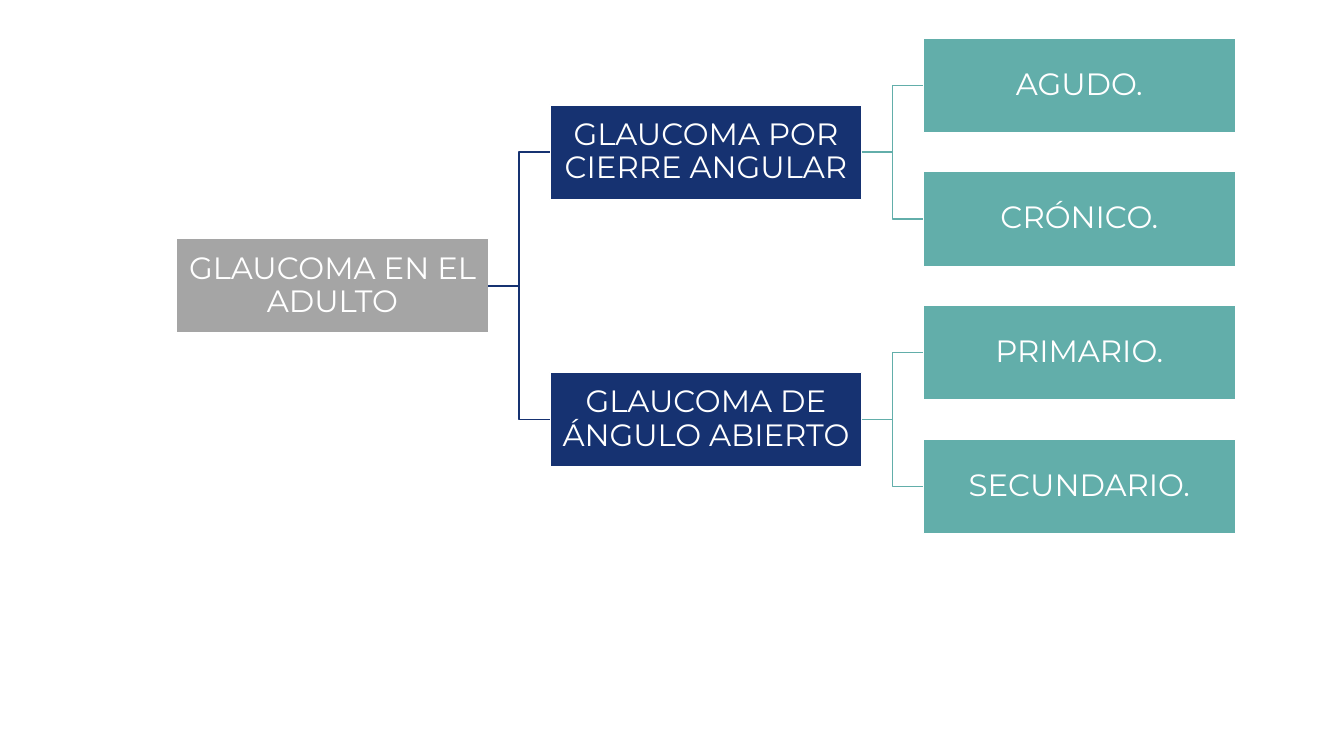
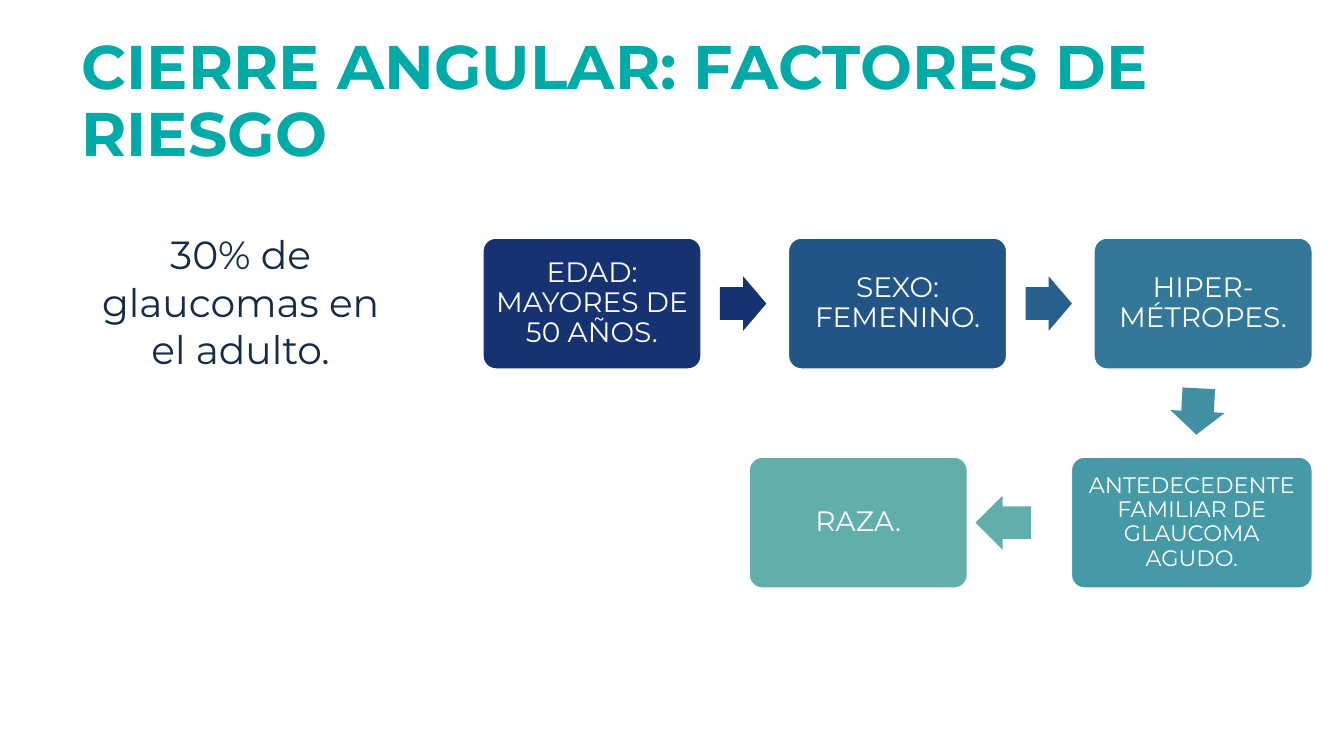
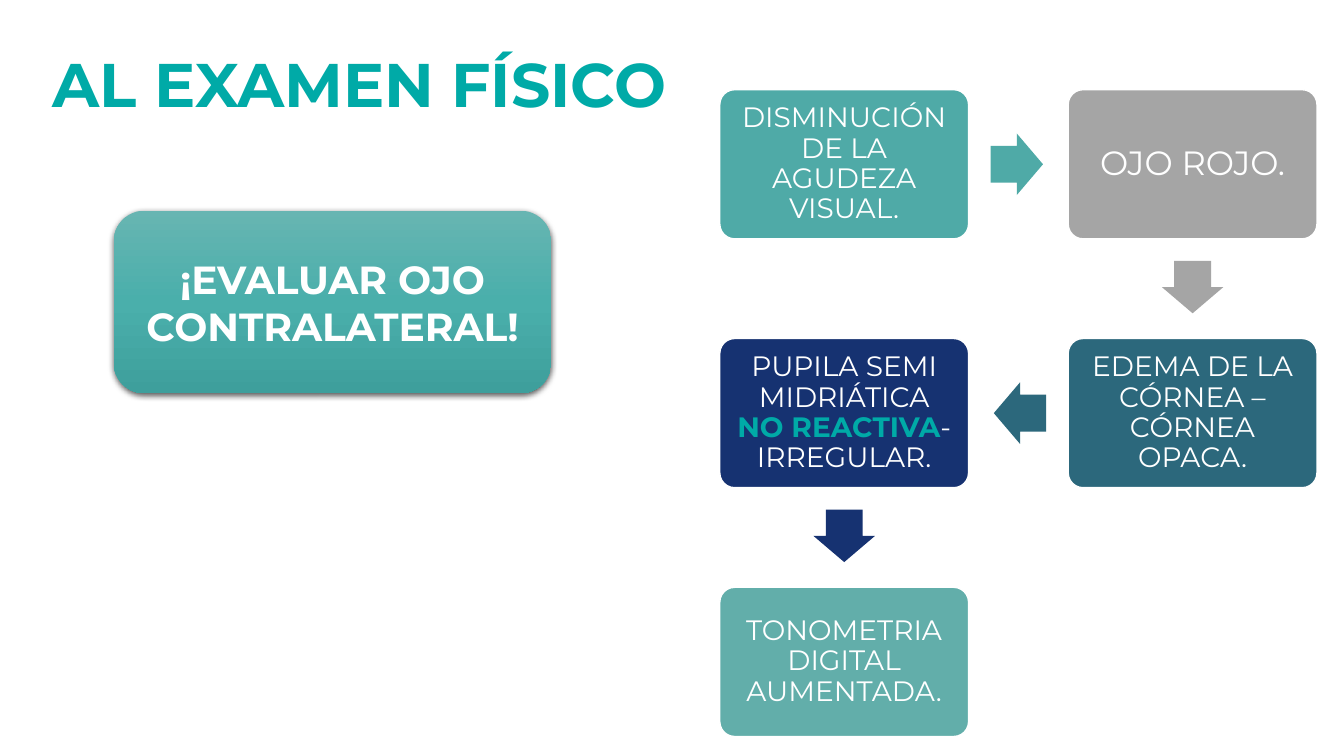
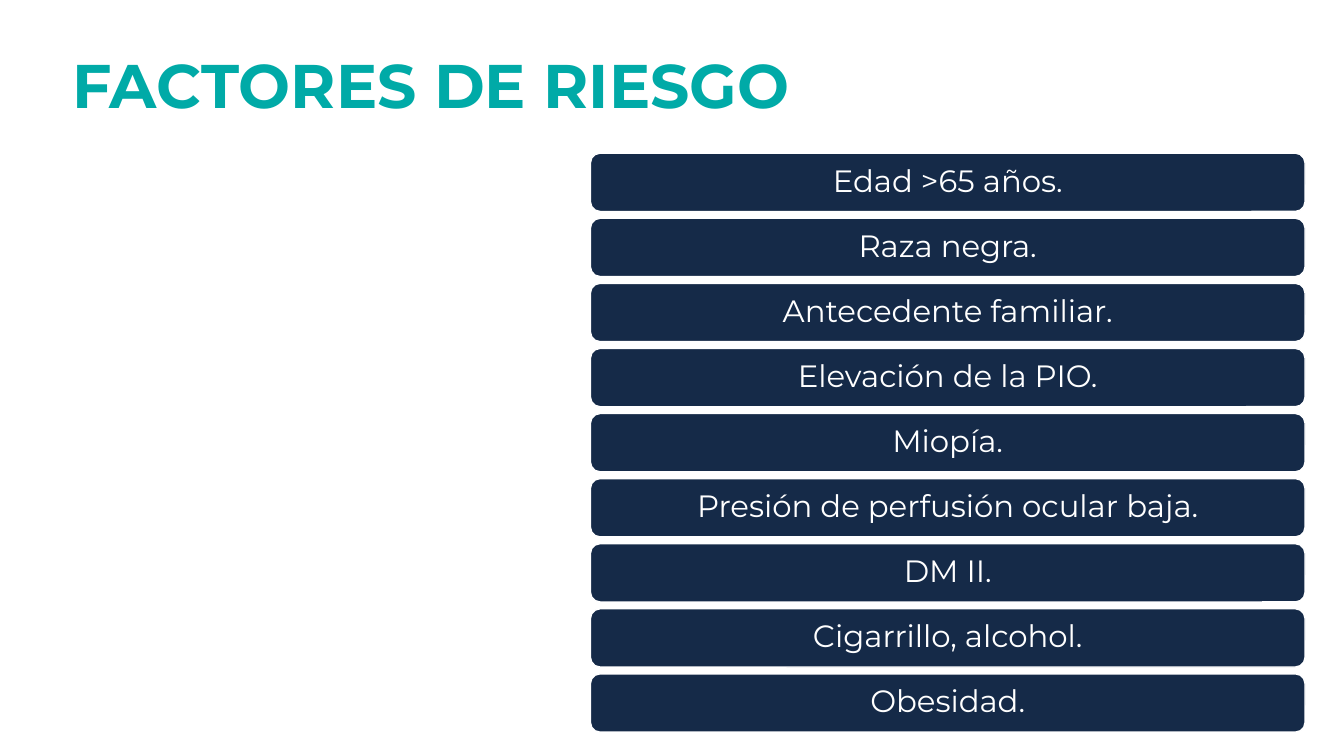
from copy import deepcopy
from math import atan2, cos, degrees, sin

from lxml.etree import SubElement
from pptx import Presentation
from pptx.dml.color import RGBColor
from pptx.enum.shapes import MSO_CONNECTOR, MSO_SHAPE
from pptx.enum.text import MSO_ANCHOR, MSO_AUTO_SIZE, PP_ALIGN
from pptx.oxml.ns import qn
from pptx.util import Cm, Pt

# Shared style
FONT = "Montserrat"
COLORS = {
    "white": "FFFFFF", "title": "00AAA7", "ink": "152B48", "bar": "152A48",
    "grey": "A5A5A5", "navy": "163271", "blue": "235486", "blue_arrow": "28608D",
    "steel": "337898", "steel_arrow": "408FA3", "lagoon": "469AA7",
    "teal": "62AEAA", "green": "4FAAA7", "petrol": "2C687C",
    "fade_top": "67B5B2", "fade_middle": "4AAFAB", "fade_bottom": "3E9F9C",
}
TITLE_LAYOUT, BLANK_LAYOUT = 5, 6
LEFT_SITE, RIGHT_SITE = 1, 3

# Slide 1: classification tree
TREE_ROOT = "GLAUCOMA EN EL ADULTO"
TREE_BRANCHES = [
    ("GLAUCOMA POR CIERRE ANGULAR", ["AGUDO.", "CRÓNICO."]),
    ("GLAUCOMA DE ÁNGULO ABIERTO", ["PRIMARIO.", "SECUNDARIO."]),
]

# Slide 2: steps are (runs, colour, text size, left, top, width);
# arrows are (colour, length, shift along the arrow)
ANGLE_TITLE = "CIERRE ANGULAR: FACTORES DE RIESGO"
ANGLE_NOTE = "30% de glaucomas en el adulto."
ANGLE_STEPS = [
    (["EDAD: MAYORES DE 50 AÑOS."], "navy", 20, 12.17, 6, 5.5),
    (["SEXO: FEMENINO."], "blue", 20, 19.87, 6, 5.5),
    (["HIPER-MÉTROPES."], "steel", 20, 27.57, 6, 5.5),
    (["ANTEDECEDENTE FAMILIAR DE GLAUCOMA AGUDO."], "lagoon", 16, 27, 11.52, 6.07),
    (["RAZA."], "teal", 20, 18.88, 11.52, 5.5),
]
ANGLE_ARROWS = [("navy", 1.17, -0.04), ("blue_arrow", 1.17, -0.04),
                ("steel_arrow", 1.17, -0.04), ("teal", 1.4, 0.55)]

# Slide 3: steps are (runs, colour, text size, column, row)
EXAM_TITLE = "AL EXAMEN FÍSICO"
EXAM_ALERT = "¡EVALUAR OJO CONTRALATERAL!"
EXAM_STEPS = [
    (["DISMINUCIÓN DE LA AGUDEZA VISUAL."], "green", 20, 0, 0),
    (["OJO ROJO."], "grey", 24, 1, 0),
    (["EDEMA DE LA CÓRNEA – CÓRNEA OPACA."], "petrol", 20, 1, 1),
    (["PUPILA SEMI MIDRIÁTICA ", ("NO REACTIVA", "title"), "- IRREGULAR."],
     "navy", 20, 0, 1),
    (["TONOMETRIA DIGITAL AUMENTADA."], "teal", 20, 0, 2),
]

# Slide 4: list of bars
RISK_TITLE = "FACTORES DE RIESGO"
RISK_FACTORS = [
    "Edad >65 años.", "Raza negra.", "Antecedente familiar.",
    "Elevación de la PIO.", "Miopía.", "Presión de perfusión ocular baja.",
    "DM II.", "Cigarrillo, alcohol.", "Obesidad.",
]


def rgb(name):
    return RGBColor.from_string(COLORS[name])


def set_all(target, values):
    for name, value in values.items():
        setattr(target, name, value)


def write(shape, runs, size, color="white", bold=False, inset=None,
          align=PP_ALIGN.CENTER, spacing=0.9, anchor=MSO_ANCHOR.MIDDLE):
    """Fill a shape with one paragraph; a (text, colour) run is bold."""
    frame = shape.text_frame
    set_all(frame, {"word_wrap": True, "auto_size": MSO_AUTO_SIZE.NONE,
                    "vertical_anchor": anchor})
    if inset is not None:
        sides = ("margin_left", "margin_top", "margin_right", "margin_bottom")
        set_all(frame, dict.fromkeys(sides, Cm(inset)))
    paragraph = frame.paragraphs[0]
    set_all(paragraph, {"alignment": align, "line_spacing": spacing})
    for item in runs:
        text, run_color, run_bold = (
            (item, color, bold) if isinstance(item, str) else (*item, True))
        run = paragraph.add_run()
        run.text = text
        set_all(run.font, {"name": FONT, "size": Pt(size), "bold": run_bold})
        run.font.color.rgb = rgb(run_color)


def add_box(slide, kind, place, color, outlined=True):
    shape = slide.shapes.add_shape(kind, *map(Cm, place))
    shape.shadow.inherit = False
    shape.fill.solid()
    shape.fill.fore_color.rgb = rgb(color)
    if outlined:
        shape.line.color.rgb = rgb("white")
        shape.line.width = Pt(1)
    else:
        shape.line.fill.background()
    return shape


def add_titled_slide(presentation, text, left, top, width=29.21):
    slide = presentation.slides.add_slide(presentation.slide_layouts[TITLE_LAYOUT])
    title = slide.shapes.title
    set_all(title, {"left": Cm(left), "top": Cm(top),
                    "width": Cm(width), "height": Cm(3.68)})
    write(title, [text], 44, "title", bold=True, align=PP_ALIGN.LEFT)
    return slide


def add_step(slide, runs, color, size, place):
    shape = add_box(slide, MSO_SHAPE.ROUNDED_RECTANGLE, place, color)
    shape.adjustments[0] = 0.1
    write(shape, runs, size, inset=0.2)


def add_flow_arrow(slide, start, end, color, length, height, shift=-0.04):
    """Point an arrow from one step to the next, midway between them."""
    (x1, y1), (x2, y2) = [(left + width / 2, top + tall / 2)
                          for left, top, width, tall in (start, end)]
    angle = atan2(y2 - y1, x2 - x1)
    left = (x1 + x2) / 2 + shift * cos(angle) - length / 2
    top = (y1 + y2) / 2 + shift * sin(angle) - height / 2
    arrow = add_box(slide, MSO_SHAPE.RIGHT_ARROW, (left, top, length, height),
                    color, outlined=False)
    arrow.adjustments[0], arrow.adjustments[1] = 0.6, 0.5
    arrow.rotation = round(degrees(angle), 1)


def add_tree_link(slide, parent, child, color):
    link = slide.shapes.add_connector(MSO_CONNECTOR.ELBOW, 0, 0, 0, 0)
    link.begin_connect(parent, RIGHT_SITE)
    link.end_connect(child, LEFT_SITE)
    link.line.color.rgb = rgb(color)
    link.line.width = Pt(1)
    SubElement(link._element.spPr, qn("a:effectLst"))


def build_tree(presentation):
    slide = presentation.slides.add_slide(presentation.slide_layouts[BLANK_LAYOUT])
    left, top, column_step, row_step = 4.45, 0.96, 9.41, 3.37

    def add_node(text, column, row, color):
        place = (left + column * column_step, top + row * row_step, 7.86, 2.38)
        node = add_box(slide, MSO_SHAPE.RECTANGLE, place, color)
        write(node, [text], 22, inset=0.05)
        return node

    leaf_count = sum(len(leaves) for _, leaves in TREE_BRANCHES)
    root = add_node(TREE_ROOT, 0, (leaf_count - 1) / 2, "grey")
    row = 0
    for text, leaves in TREE_BRANCHES:
        branch = add_node(text, 1, row + (len(leaves) - 1) / 2, "navy")
        add_tree_link(slide, root, branch, "navy")
        for leaf_text in leaves:
            leaf = add_node(leaf_text, 2, row, "teal")
            add_tree_link(slide, branch, leaf, "teal")
            row += 1


def build_angle_risks(presentation):
    slide = add_titled_slide(presentation, ANGLE_TITLE, 1.8, 0.76, 30.94)
    places = [(left, top, width, 3.3) for *_, left, top, width in ANGLE_STEPS]
    for (runs, color, size, *_), place in zip(ANGLE_STEPS, places):
        add_step(slide, runs, color, size, place)
    for start, end, (color, length, shift) in zip(places, places[1:], ANGLE_ARROWS):
        add_flow_arrow(slide, start, end, color, length, 1.37, shift)
    note = slide.shapes.add_textbox(*map(Cm, (1.8, 5.69, 8.53, 3.84)))
    write(note, [ANGLE_NOTE], 28, "ink", spacing=1.0, anchor=MSO_ANCHOR.TOP)


def add_alert(slide):
    alert = add_box(slide, MSO_SHAPE.ROUNDED_RECTANGLE, (2.87, 5.31, 11.02, 4.6),
                    "green", outlined=False)
    write(alert, [EXAM_ALERT], 28, bold=True, spacing=1.0)
    # Three-stop gradient from top to bottom
    alert.fill.gradient()
    alert.fill.gradient_angle = 270
    properties = alert._element.spPr
    stop_list = properties.find(".//" + qn("a:gsLst"))
    stop_list.insert(1, deepcopy(stop_list[0]))
    fades = [(0, "fade_top"), (0.5, "fade_middle"), (1, "fade_bottom")]
    for stop, (position, color) in zip(alert.fill.gradient_stops, fades):
        stop.position = position
        stop.color.rgb = rgb(color)
    # Soft shadow below
    shadow = SubElement(properties.find(qn("a:effectLst")), qn("a:outerShdw"),
                        blurRad=str(Pt(4.5)), dist=str(Pt(1.5)),
                        dir="5400000", rotWithShape="0")
    shade = SubElement(shadow, qn("a:srgbClr"), val="000000")
    SubElement(shade, qn("a:alpha"), val="63000")


def build_exam(presentation):
    slide = add_titled_slide(presentation, EXAM_TITLE, 1.07, 0.36)
    places = [(18.14 + column * 8.78, 2.26 + row * 6.27, 6.27, 3.76)
              for *_, column, row in EXAM_STEPS]
    for (runs, color, size, *_), place in zip(EXAM_STEPS, places):
        add_step(slide, runs, color, size, place)
    for step, start, end in zip(EXAM_STEPS, places, places[1:]):
        add_flow_arrow(slide, start, end, step[1], 1.32, 1.55)
    add_alert(slide)


def build_risk_list(presentation):
    slide = add_titled_slide(presentation, RISK_TITLE, 1.57, 0.38)
    for index, text in enumerate(RISK_FACTORS):
        place = (14.88, 3.86 + index * 1.64, 18.01, 1.47)
        bar = add_box(slide, MSO_SHAPE.ROUNDED_RECTANGLE, place, "bar")
        write(bar, [text], 22, inset=0.23)


def main():
    presentation = Presentation()
    set_all(presentation, {"slide_width": Cm(33.87), "slide_height": Cm(19.05)})
    for build in (build_tree, build_angle_risks, build_exam, build_risk_list):
        build(presentation)
    presentation.save("out.pptx")


if __name__ == "__main__":
    main()
